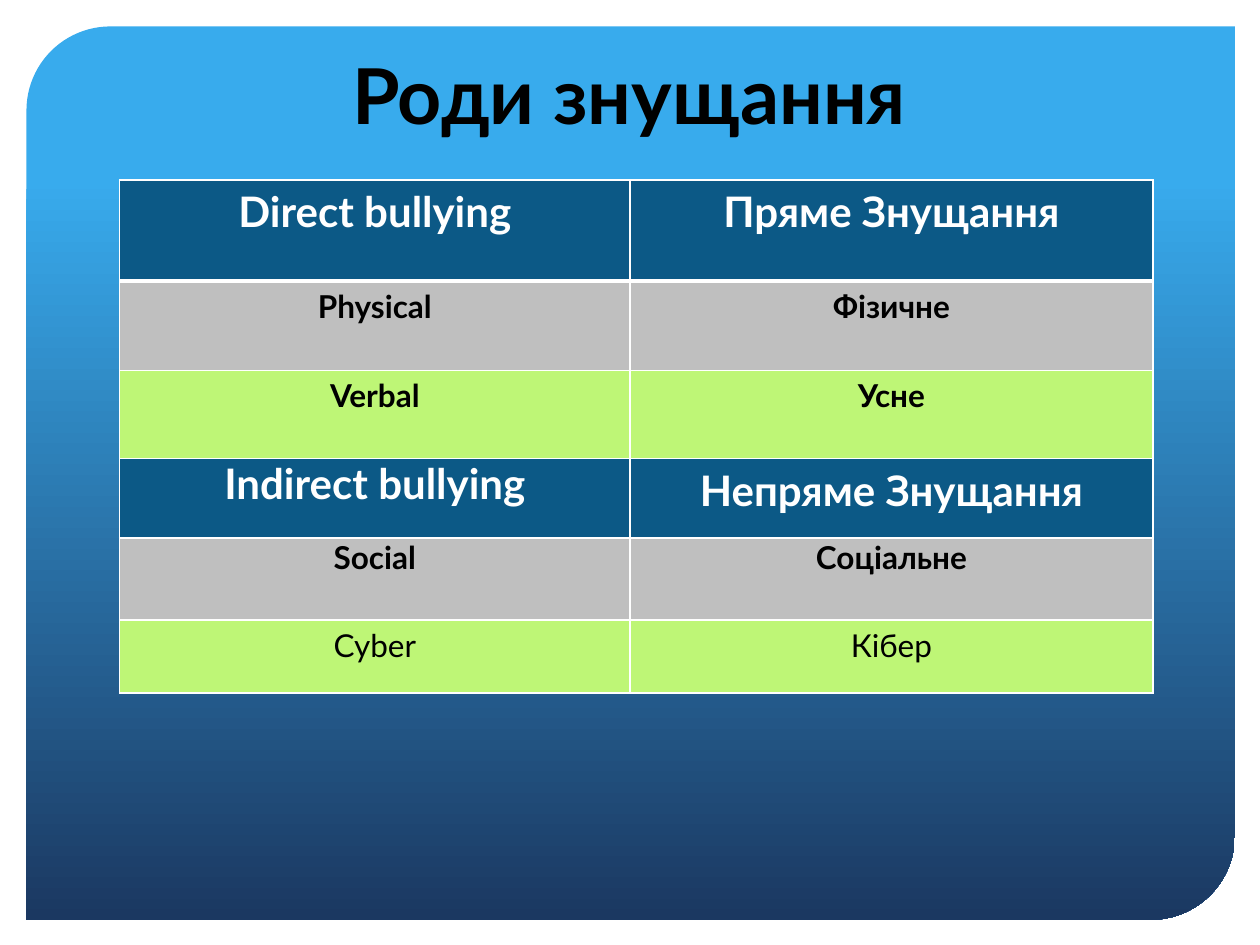
import pptx
import pptx.dml.color
import pptx.enum.shapes
import pptx.enum.text
import pptx.oxml.ns
import pptx.util
from lxml import etree

RGBColor = pptx.dml.color.RGBColor
WHITE = RGBColor(0xFF, 0xFF, 0xFF)
BLACK = RGBColor(0, 0, 0)
SKY = RGBColor(0x38, 0xAB, 0xED)
NAVY = RGBColor(0x1B, 0x38, 0x61)
TEAL = RGBColor(0x0C, 0x59, 0x86)
GREY = RGBColor(0xBF, 0xBF, 0xBF)
LIME = RGBColor(0xBE, 0xF6, 0x76)

FONT = "Lato"
CENTER = pptx.enum.text.PP_ALIGN.CENTER
COLUMN_WIDTHS = [4.05, 4.15]
KINDS = [
    (0.8, "Direct bullying", "Пряме Знущання", TEAL, True, (0.05, 0.05)),
    (0.71, "Physical", "Фізичне", GREY, True, (0.05, 0.05)),
    (0.7, "Verbal", "Усне", LIME, True, (0.05, 0.05)),
    (0.63, "Indirect bullying", "Непряме Знущання", TEAL, True, (0, 0.05)),
    (0.65, "Social", "Соціальне", GREY, True, (0, 0)),
    (0.58, "Cyber", "Кібер", LIME, False, (0.05, 0.05)),
]


def place(shape, left, top, width, height):
    shape.left, shape.top, shape.width, shape.height = map(
        pptx.util.Inches, (left, top, width, height))


def write(frame, text, size, color, bold):
    frame.text = text
    paragraph = frame.paragraphs[0]
    paragraph.alignment = CENTER
    font = paragraph.font
    font.name, font.size, font.bold = FONT, pptx.util.Pt(size), bold
    font.color.rgb = color


def add_backdrop(slide):
    margin = pptx.util.Inches(0.21)
    backdrop = slide.shapes.add_shape(
        pptx.enum.shapes.MSO_SHAPE.ROUND_2_DIAG_RECTANGLE, margin, margin,
        pptx.util.Inches(9.59), pptx.util.Inches(7.09))
    backdrop.adjustments[0] = 0.094
    backdrop.adjustments[1] = 0
    backdrop.shadow.inherit = False
    backdrop.line.fill.background()
    backdrop.fill.gradient()
    backdrop.fill.gradient_angle = 270
    stops = zip(backdrop.fill.gradient_stops, (0.17, 1), (SKY, NAVY))
    for stop, position, color in stops:
        stop.position = position
        stop.color.rgb = color
    slide.shapes.element.insert(2, backdrop.element)


def add_title(slide):
    title = slide.shapes.title
    place(title, 0.85, 0.66, 8.29, 1.14)
    frame = title.text_frame
    frame.auto_size = pptx.enum.text.MSO_AUTO_SIZE.NONE
    frame.vertical_anchor = pptx.enum.text.MSO_ANCHOR.BOTTOM
    frame.margin_top = 0
    frame.margin_bottom = pptx.util.Inches(0.69)
    write(frame, "Роди знущання", 44, BLACK, True)


def add_borders(cell, widths):
    properties = cell._tc.get_or_add_tcPr()
    for index, (side, width) in enumerate(zip("LRTB", widths)):
        line = etree.Element(pptx.oxml.ns.qn(f"a:ln{side}"),
                             w=str(pptx.util.Pt(width)))
        fill = etree.SubElement(line, pptx.oxml.ns.qn("a:solidFill"))
        etree.SubElement(fill, pptx.oxml.ns.qn("a:srgbClr"), val=str(WHITE))
        properties.insert(index, line)


def fill_cell(cell, text, color, bold, inset, borders):
    heading = color == TEAL
    write(cell.text_frame, text, 24 if heading else 18,
          WHITE if heading else BLACK, bold)
    cell.margin_left = cell.margin_right = pptx.util.Inches(0.07)
    cell.margin_top = cell.margin_bottom = pptx.util.Inches(inset)
    cell.fill.solid()
    cell.fill.fore_color.rgb = color
    add_borders(cell, borders)


def add_kinds_table(slide):
    height = sum(kind[0] for kind in KINDS)
    table = slide.shapes.add_table(
        len(KINDS), len(COLUMN_WIDTHS), *map(
            pptx.util.Inches, (0.95, 1.43, sum(COLUMN_WIDTHS), height))).table
    for column, width in zip(table.columns, COLUMN_WIDTHS):
        column.width = pptx.util.Inches(width)
    for index, (row, kind) in enumerate(zip(table.rows, KINDS)):
        row_height, english, ukrainian, color, bold, insets = kind
        row.height = pptx.util.Inches(row_height)
        borders = (1, 1, 3 if index == 1 else 1, 3 if index == 0 else 1)
        for cell, text, inset in zip(row.cells, (english, ukrainian), insets):
            fill_cell(cell, text, color, bold, inset, borders)


def main():
    deck = pptx.Presentation()
    deck.slide_width = pptx.util.Inches(10)
    deck.slide_height = pptx.util.Inches(7.5)
    slide = deck.slides.add_slide(deck.slide_layouts[5])
    add_backdrop(slide)
    add_title(slide)
    add_kinds_table(slide)
    deck.save("out.pptx")


if __name__ == "__main__":
    main()
